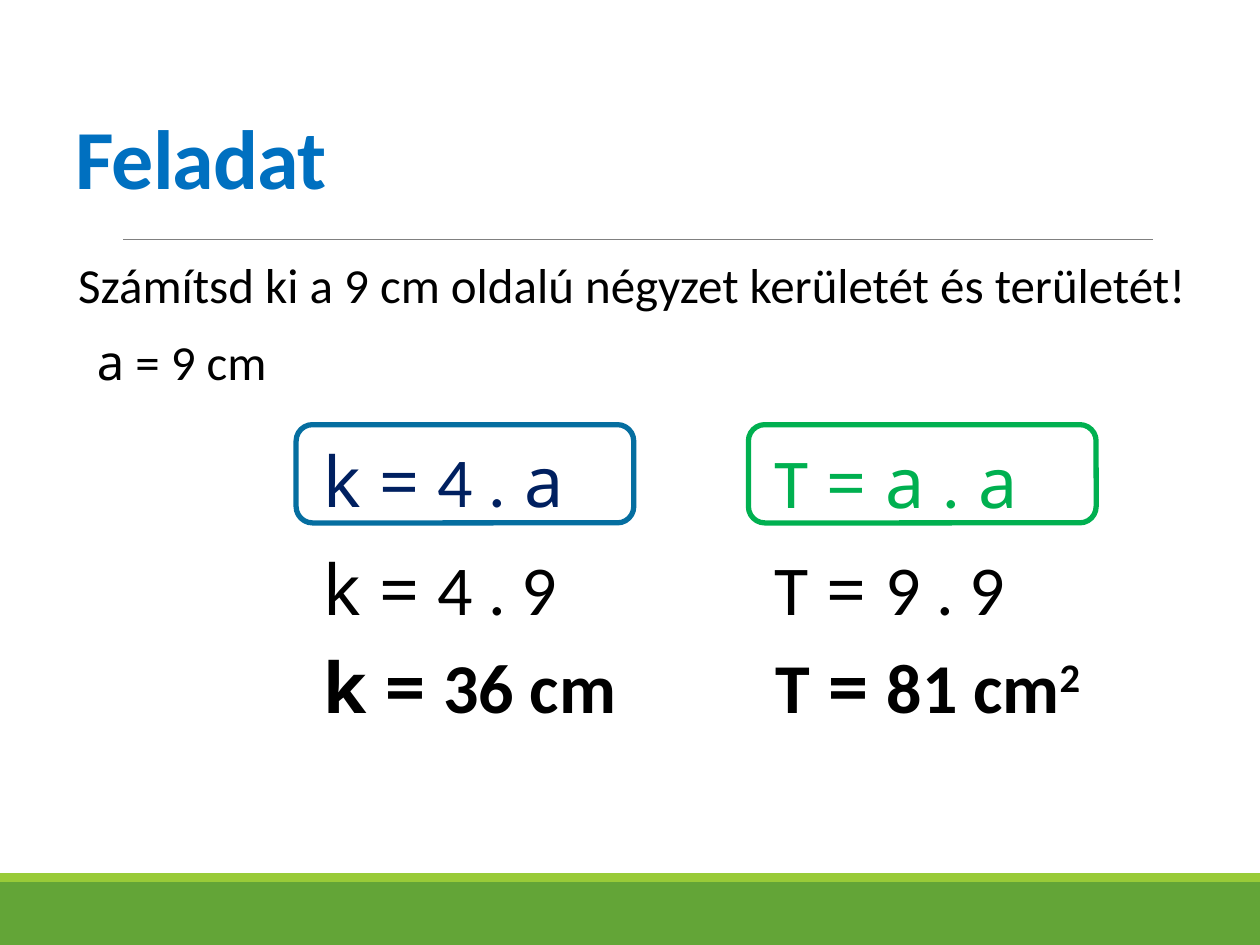
import dataclasses
import typing

import lxml.etree
import pptx
import pptx.dml.color
import pptx.enum.shapes
import pptx.enum.text
import pptx.oxml.ns
import pptx.util

PX = 9144
RGB = pptx.dml.color.RGBColor
GREEN = RGB(0x63, 0xA5, 0x37)
LIME = RGB(0x99, 0xCB, 0x38)
GRAY = RGB(0x80, 0x80, 0x80)
TITLE_BLUE = RGB(0x00, 0x70, 0xC0)
NAVY = RGB(0x00, 0x20, 0x60)
FRAME_BLUE = RGB(0x05, 0x6E, 0xA0)
FORMULA_GREEN = RGB(0x00, 0xB0, 0x50)
BLACK = RGB(0, 0, 0)
CALIBRI = "Calibri"
NOTO = "Noto Sans"
SHAPES = pptx.enum.shapes.MSO_SHAPE


class Box(typing.NamedTuple):
    left: int
    top: int
    width: int
    height: int

    def emu(self) -> list[int]:
        return [length * PX for length in self]


class Piece(typing.NamedTuple):
    text: str
    font: str = CALIBRI
    raised: bool = False


@dataclasses.dataclass(frozen=True)
class Line:
    box: Box
    pieces: tuple[Piece, ...]
    size: int = 40
    color: RGB = BLACK
    bold: bool = False
    wrap: bool = False


def add_line(slide, line: Line):
    frame = slide.shapes.add_textbox(*line.box.emu()).text_frame
    frame.word_wrap = line.wrap
    if not line.wrap:
        frame.auto_size = pptx.enum.text.MSO_AUTO_SIZE.SHAPE_TO_FIT_TEXT
    for piece in line.pieces:
        run = frame.paragraphs[0].add_run()
        run.text = piece.text
        run.font.name = piece.font
        run.font.size = pptx.util.Pt(line.size)
        run.font.bold = line.bold
        run.font.color.rgb = line.color
        if piece.raised:
            run.font._element.set("baseline", "30000")
    return frame


def add_band(slide, box: Box, color: RGB) -> None:
    band = slide.shapes.add_shape(SHAPES.RECTANGLE, *box.emu())
    band.shadow.inherit = False
    band.fill.solid()
    band.fill.fore_color.rgb = color
    band.line.fill.background()


def add_frame(slide, box: Box, color: RGB) -> None:
    frame = slide.shapes.add_shape(SHAPES.ROUNDED_RECTANGLE, *box.emu())
    frame.shadow.inherit = False
    frame.fill.background()
    frame.line.color.rgb = color
    frame.line.width = pptx.util.Pt(3)


def add_rule(slide, left: int, right: int, y: int) -> None:
    rule = slide.shapes.add_connector(
        pptx.enum.shapes.MSO_CONNECTOR.STRAIGHT, left * PX, y * PX, right * PX, y * PX
    )
    rule.line.color.rgb = GRAY
    rule.line.width = pptx.util.Pt(0.5)
    lxml.etree.SubElement(rule._element.spPr, pptx.oxml.ns.qn("a:effectLst"))


def add_heading(slide) -> None:
    heading = add_line(
        slide, Line(Box(50, 44, 900, 125), (Piece("Feladat"),), 48, TITLE_BLUE, True, True)
    )
    heading.vertical_anchor = pptx.enum.text.MSO_ANCHOR.BOTTOM
    paragraph = heading.paragraphs[0]
    paragraph.line_spacing = 0.85
    paragraph.runs[0].font._element.set("spc", "-50")


def add_task(slide) -> None:
    sentence = Piece("Számítsd ki a 9 cm oldalú négyzet kerületét és területét!")
    task = add_line(slide, Line(Box(50, 202, 900, 116), (sentence,), 28, wrap=True))
    task.margin_left = 12 * PX
    task.margin_right = 0
    paragraph = task.paragraphs[0]
    paragraph.line_spacing = 0.9
    paragraph.space_before = pptx.util.Pt(12)
    paragraph.space_after = pptx.util.Pt(2)
    add_line(slide, Line(Box(67, 258, 161, 57), (Piece("a", NOTO), Piece(" = 9 cm")), 28))


def add_solutions(slide) -> None:
    perimeter = Piece("k = ", NOTO)
    area = (Piece("T"), Piece(" = ", NOTO))
    side = Piece(" a", NOTO)

    add_line(slide, Line(Box(247, 342, 245, 77), (perimeter, Piece("4 ."), side), color=NAVY))
    add_frame(slide, Box(235, 337, 268, 78), FRAME_BLUE)
    add_line(slide, Line(Box(247, 428, 224, 77), (perimeter, Piece("4 . 9"))))
    add_line(slide, Line(Box(247, 506, 267, 77), (perimeter, Piece("36 cm")), bold=True))

    area_formula = (Piece("T"), Piece(" = a ", NOTO), Piece("."), side)
    add_line(slide, Line(Box(605, 343, 247, 77), area_formula, color=FORMULA_GREEN))
    add_frame(slide, Box(594, 337, 276, 78), FORMULA_GREEN)
    add_line(slide, Line(Box(605, 428, 216, 77), (*area, Piece("9 . 9"))))
    area_result = (*area, Piece("81 cm"), Piece("2", raised=True))
    add_line(slide, Line(Box(606, 506, 278, 77), area_result, bold=True))


def main() -> None:
    deck = pptx.Presentation()
    deck.slide_width = 1000 * PX
    deck.slide_height = 750 * PX
    slide = deck.slides.add_slide(deck.slide_layouts[6])
    add_band(slide, Box(0, 700, 1000, 50), GREEN)
    add_band(slide, Box(0, 693, 1000, 7), LIME)
    add_rule(slide, 98, 915, 190)
    add_heading(slide)
    add_task(slide)
    add_solutions(slide)
    deck.save("out.pptx")


if __name__ == "__main__":
    main()
